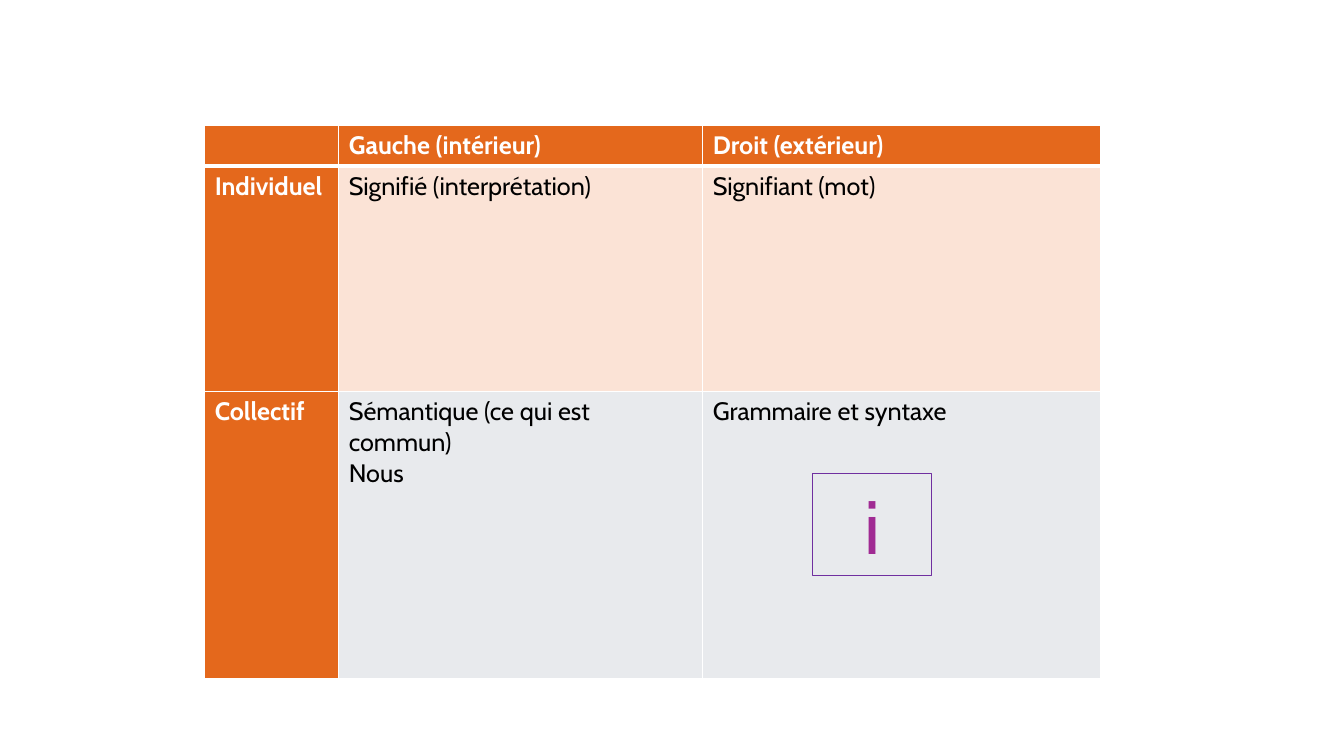
from dataclasses import dataclass

from lxml.etree import SubElement
from pptx import Presentation
from pptx.dml.color import RGBColor as Rgb
from pptx.enum.shapes import MSO_SHAPE as Preset
from pptx.enum.text import MSO_ANCHOR as Anchor, MSO_AUTO_SIZE as AutoSize, PP_ALIGN as Align
from pptx.oxml.ns import qn
from pptx.util import Inches, Pt

COLORS = {
    "heading": "E4681C",
    "individual": "FBE3D6",
    "collective": "E8EAED",
    "white": "FFFFFF",
    "black": "000000",
    "frame": "7030A0",
    "letter": "A02B93",
}
FONT = "Cabin"
COLUMN_WIDTHS = (1.33, 3.61, 3.95)


@dataclass(frozen=True)
class QuadrantRow:
    height: float
    fill: str
    texts: tuple[str, str, str]


ROWS = (
    QuadrantRow(0.41, "heading", ("", "Gauche (intérieur)", "Droit (extérieur)")),
    QuadrantRow(2.23, "individual", ("Individuel", "Signifié (interprétation)", "Signifiant (mot)")),
    QuadrantRow(2.85, "collective",
                ("Collectif", "Sémantique (ce qui est commun)\nNous", "Grammaire et syntaxe")),
)


def rgb(name: str) -> Rgb:
    return Rgb.from_string(COLORS[name])


def style_text(frame, size: float, color: str, bold: bool) -> None:
    formats = {"name": FONT, "size": Pt(size), "bold": bold}
    for paragraph in frame.paragraphs:
        for attribute, value in formats.items():
            setattr(paragraph.font, attribute, value)
        paragraph.font.color.rgb = rgb(color)
        for run in paragraph.runs:
            for attribute, value in formats.items():
                setattr(run.font, attribute, value)
            run.font.color.rgb = rgb(color)


def add_borders(cell, row_index: int) -> None:
    """Draw white cell edges, with a thick one under the heading row."""
    widths = {
        "lnL": 1,
        "lnR": 1,
        "lnT": 3 if row_index == 1 else 1,
        "lnB": 3 if row_index == 0 else 1,
    }
    properties = cell._tc.get_or_add_tcPr()
    for edge, width in widths.items():
        line = SubElement(properties, qn(f"a:{edge}"), w=str(Pt(width)))
        fill = SubElement(line, qn("a:solidFill"))
        SubElement(fill, qn("a:srgbClr"), val=COLORS["white"])


def add_quadrants(slide) -> None:
    quadrants = slide.shapes.add_table(
        len(ROWS), len(COLUMN_WIDTHS), Inches(2.03), Inches(1.24),
        Inches(sum(COLUMN_WIDTHS)), Inches(sum(row.height for row in ROWS)),
    ).table
    for column, width in zip(quadrants.columns, COLUMN_WIDTHS):
        column.width = Inches(width)
    for row_index, row in enumerate(ROWS):
        quadrants.rows[row_index].height = Inches(row.height)
        for column_index, text in enumerate(row.texts):
            cell = quadrants.cell(row_index, column_index)
            is_heading = row_index == 0 or column_index == 0
            add_borders(cell, row_index)
            cell.fill.solid()
            cell.fill.fore_color.rgb = rgb("heading" if is_heading else row.fill)
            cell.text = text
            style_text(cell.text_frame, 18, "white" if is_heading else "black", is_heading)


def add_letter(slide) -> None:
    letter = slide.shapes.add_shape(
        Preset.RECTANGLE, Inches(8.06), Inches(4.7), Inches(1.18), Inches(1.01))
    letter.shadow.inherit = False
    letter.fill.background()
    letter.line.color.rgb = rgb("frame")
    letter.line.width = Pt(0.75)
    frame = letter.text_frame
    frame.text = "i"
    formats = {"word_wrap": True, "auto_size": AutoSize.SHAPE_TO_FIT_TEXT,
               "vertical_anchor": Anchor.TOP}
    for attribute, value in formats.items():
        setattr(frame, attribute, value)
    frame.paragraphs[0].alignment = Align.CENTER
    style_text(frame, 54, "letter", False)


def main() -> None:
    deck = Presentation()
    deck.slide_width, deck.slide_height = Inches(13.33), Inches(7.5)
    slide = deck.slides.add_slide(deck.slide_layouts[6])
    add_quadrants(slide)
    add_letter(slide)
    deck.save("out.pptx")


if __name__ == "__main__":
    main()
